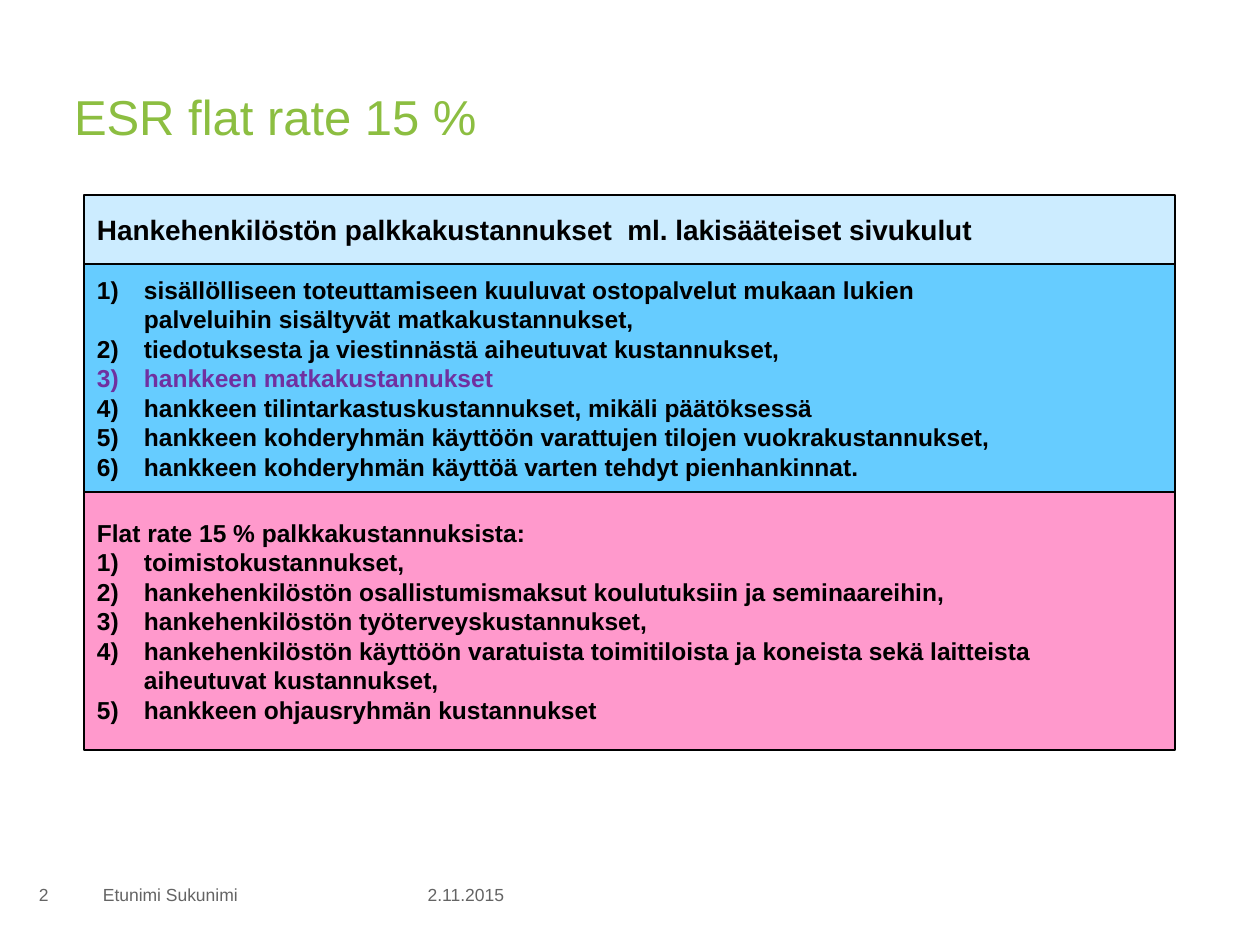
from lxml.etree import SubElement
from pptx import Presentation
from pptx.dml.color import RGBColor
from pptx.enum.shapes import MSO_SHAPE
from pptx.enum.text import MSO_ANCHOR, PP_ALIGN
from pptx.oxml.ns import qn
from pptx.util import Emu, Pt

PX_PER_INCH = 126
COLORS = {
    "title": "8CBE41",
    "footer": "646464",
    "text": "000000",
    "line": "000000",
    "highlight": "7030A0",
    "salaries": "CCECFF",
    "direct": "66CCFF",
    "flat_rate": "FF99CC",
}
PANEL_LEFT, PANEL_WIDTH = 84, 1091
LIST_INDENT = 47

SALARIES = "Hankehenkilöstön palkkakustannukset  ml. lakisääteiset sivukulut"
TRAVEL = "hankkeen matkakustannukset"
DIRECT_COSTS = [
    "sisällölliseen toteuttamiseen kuuluvat ostopalvelut mukaan lukien "
    "palveluihin sisältyvät matkakustannukset,",
    "tiedotuksesta ja viestinnästä aiheutuvat kustannukset,",
    TRAVEL,
    "hankkeen tilintarkastuskustannukset, mikäli päätöksessä",
    "hankkeen kohderyhmän käyttöön varattujen tilojen vuokrakustannukset,",
    "hankkeen kohderyhmän käyttöä varten tehdyt pienhankinnat.",
]
FLAT_RATE = "Flat rate 15 % palkkakustannuksista:"
FLAT_RATE_COSTS = [
    "toimistokustannukset,",
    "hankehenkilöstön osallistumismaksut koulutuksiin ja seminaareihin,",
    "hankehenkilöstön työterveyskustannukset,",
    "hankehenkilöstön käyttöön varatuista toimitiloista ja koneista sekä "
    "laitteista aiheutuvat kustannukset,",
    "hankkeen ohjausryhmän kustannukset",
]


def px(length):
    return Emu(round(length * 914400 / PX_PER_INCH))


def rgb(name):
    return RGBColor.from_string(COLORS[name])


def apply(target, values):
    for name, value in values.items():
        setattr(target, name, value)


def set_frame(frame, anchor, wrap, left, top, right, bottom):
    apply(frame, {
        "vertical_anchor": anchor,
        "word_wrap": wrap,
        "margin_left": px(left),
        "margin_top": px(top),
        "margin_right": px(right),
        "margin_bottom": px(bottom),
    })


def write(paragraph, text, size, color, bold=False, align=PP_ALIGN.LEFT):
    paragraph.alignment = align
    run = paragraph.add_run()
    run.text = text
    apply(run.font, {"name": "Arial", "size": Pt(size), "bold": bold})
    run.font.color.rgb = rgb(color)


def number(paragraph):
    """Give the paragraph an automatic number and a hanging indent."""
    properties = paragraph._p.get_or_add_pPr()
    properties.set("marL", str(px(LIST_INDENT)))
    properties.set("indent", str(-px(LIST_INDENT)))
    SubElement(properties, qn("a:buFont"), typeface="+mj-lt")
    SubElement(properties, qn("a:buAutoNum"), type="arabicParenR")


def add_title(slide, text):
    title = slide.shapes.title
    apply(title, {"left": px(74), "top": px(86),
                  "width": px(1111), "height": px(123)})
    set_frame(title.text_frame, MSO_ANCHOR.TOP, True, 0, 0, 0, 0)
    write(title.text_frame.paragraphs[0], text, 28, "title")


def add_footer(slide, text, left, width, right_inset=0, align=PP_ALIGN.LEFT):
    box = slide.shapes.add_textbox(px(left), px(870), px(width), px(49))
    set_frame(box.text_frame, MSO_ANCHOR.MIDDLE, False, 13, 6, right_inset, 6)
    write(box.text_frame.paragraphs[0], text, 10, "footer", align=align)


def add_panel(slide, top, height, fill, heading="", heading_size=14, items=()):
    panel = slide.shapes.add_shape(
        MSO_SHAPE.RECTANGLE, px(PANEL_LEFT), px(top), px(PANEL_WIDTH), px(height))
    panel.shadow.inherit = False
    panel.fill.solid()
    panel.fill.fore_color.rgb = rgb(fill)
    panel.line.color.rgb = rgb("line")
    panel.line.width = Pt(0.75)
    frame = panel.text_frame
    # The wide right inset wraps the long list items.
    set_frame(frame, MSO_ANCHOR.MIDDLE, True, 13, 6, 135, 6)
    for index, text in enumerate([heading, *items] if heading else items):
        paragraph = frame.add_paragraph() if index else frame.paragraphs[0]
        if text == heading:
            write(paragraph, text, heading_size, "text", bold=True)
        else:
            number(paragraph)
            color = "highlight" if text == TRAVEL else "text"
            write(paragraph, text, 14, color, bold=True)


def main():
    presentation = Presentation()
    apply(presentation, {"slide_width": px(1260), "slide_height": px(945)})
    slide = presentation.slides.add_slide(presentation.slide_layouts[5])

    add_title(slide, "ESR flat rate 15 %")
    add_footer(slide, "2.11.2015", 368, 149, right_inset=13, align=PP_ALIGN.RIGHT)
    add_footer(slide, "Etunimi Sukunimi", 90, 273)
    add_footer(slide, "2", 26, 59)
    add_panel(slide, 195, 69, "salaries", SALARIES, 16)
    add_panel(slide, 264, 228, "direct", items=DIRECT_COSTS)
    add_panel(slide, 492, 258, "flat_rate", FLAT_RATE, items=FLAT_RATE_COSTS)

    presentation.save("out.pptx")


if __name__ == "__main__":
    main()
